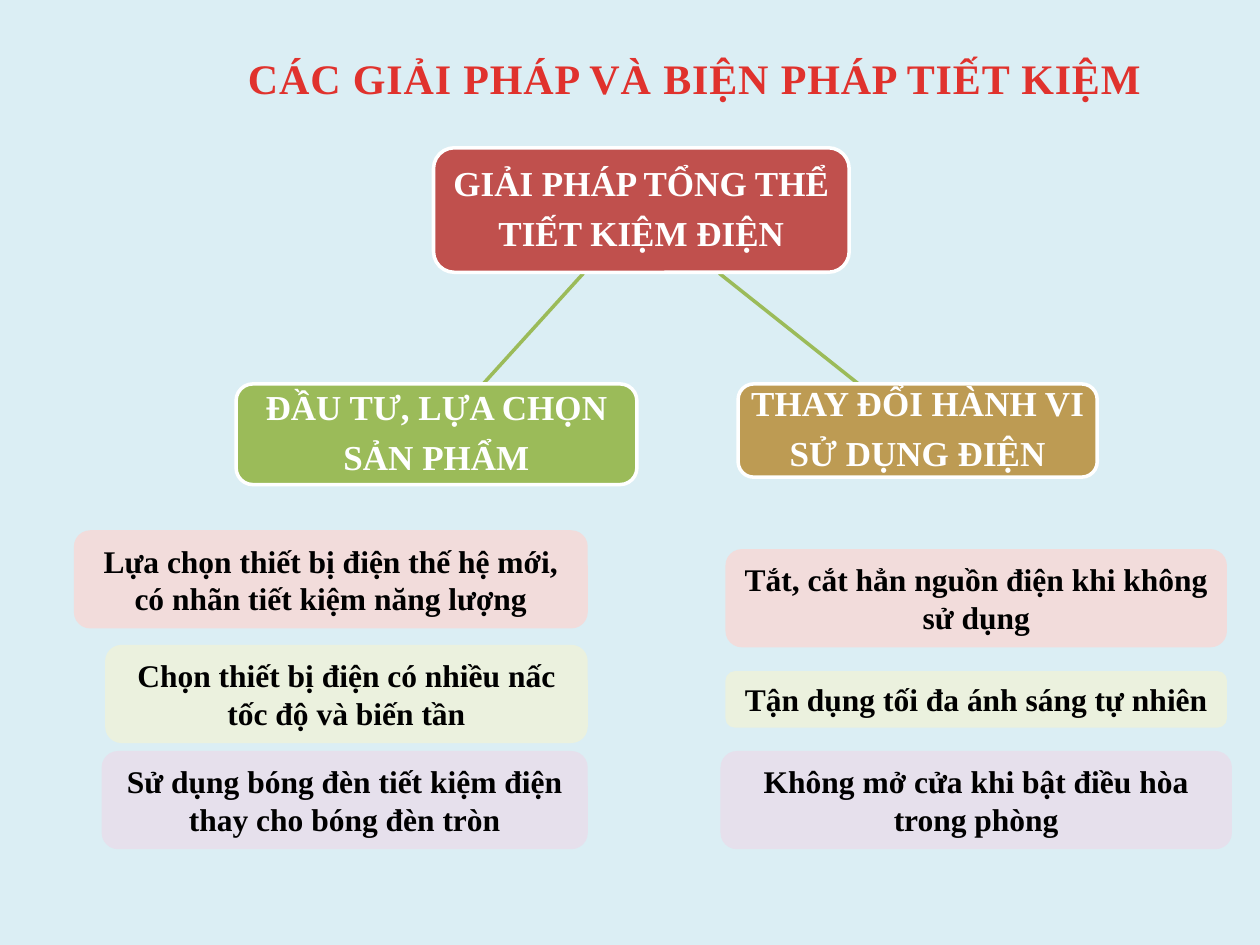
"""Build the slide on overall solutions for saving electricity."""
from lxml import etree
from pptx import Presentation
from pptx import util as u
from pptx.dml.color import RGBColor
from pptx.enum import shapes, text
from pptx.oxml import ns

FONT = "Times New Roman"
TITLE = "CÁC GIẢI PHÁP VÀ BIỆN PHÁP TIẾT KIỆM"
BOXES = [
    (["GIẢI PHÁP TỔNG THỂ", "TIẾT KIỆM ĐIỆN"], "C0504D", (8.74, 2.98, 8.38, 2.51)),
    (["THAY ĐỔI HÀNH VI", "SỬ DỤNG ĐIỆN"], "BD9B53", (14.88, 7.74, 7.24, 1.88)),
    (["ĐẦU TƯ, LỰA CHỌN", "SẢN PHẨM"], "9BBB59", (4.76, 7.74, 8.08, 2.03)),
]
BRANCHES = [(14.5, 17.32), (11.76, 9.73)]
BRANCH_TOP, BRANCH_BOTTOM = 5.51, 7.75
CARD_COLORS = ["F2DCDB", "EBF1DE", "E6E0EC"]
LEFT_CARDS_EDGE, RIGHT_CARDS_CENTER = 11.85, 19.68
LEFT_CARDS = [
    ("Lựa chọn thiết bị điện thế hệ mới, có nhãn tiết kiệm năng lượng", 10.69, 10.36, 1.98),
    ("Chọn thiết bị điện có nhiều nấc tốc độ và biến tần", 13, 9.73, 1.98),
    ("Sử dụng bóng đèn tiết kiệm điện thay cho bóng đèn tròn", 15.14, 9.8, 1.98),
]
RIGHT_CARDS = [
    ("Tắt, cắt hẳn nguồn điện khi không sử dụng", 11.07, 10.11, 1.98),
    ("Tận dụng tối đa ánh sáng tự nhiên", 13.53, 10.11, 1.14),
    ("Không mở cửa khi bật điều hòa trong phòng", 15.14, 10.31, 1.98),
]


def paint(color_format, color):
    color_format.rgb = RGBColor.from_string(color)


def format_paragraph(paragraph, size, color):
    paragraph.alignment = text.PP_ALIGN.CENTER
    paragraph.font.name = FONT
    paragraph.font.size = u.Pt(size)
    paragraph.font.bold = True
    paint(paragraph.font.color, color)


def add_title(slide):
    title = slide.shapes.title
    title.left, title.top, title.width, title.height = map(u.Cm, (4.01, 0.43, 19.99, 1.6))
    title.text_frame.vertical_anchor = text.MSO_ANCHOR.TOP
    title.text_frame.text = TITLE
    paragraph = title.text_frame.paragraphs[0]
    format_paragraph(paragraph, 24, "E0322D")
    paragraph.line_spacing = 1.5
    paragraph.runs[0]._r.get_or_add_rPr().set("spc", "50")


def add_rounded(slide, lines, fill, place, size, color):
    shape = slide.shapes.add_shape(shapes.MSO_SHAPE.ROUNDED_RECTANGLE, *map(u.Cm, place))
    shape.shadow.inherit = False
    shape.fill.solid()
    paint(shape.fill.fore_color, fill)
    shape.line.fill.background()
    frame = shape.text_frame
    frame.word_wrap = True
    frame.vertical_anchor = text.MSO_ANCHOR.MIDDLE
    frame.text = "\n".join(lines)
    for paragraph in frame.paragraphs:
        format_paragraph(paragraph, size, color)
    return shape


def add_box(slide, lines, fill, place):
    shape = add_rounded(slide, lines, fill, place, 20, "FFFFFF")
    shape.line.width = u.Pt(2)
    paint(shape.line.color, "FFFFFF")
    frame = shape.text_frame
    frame.margin_left = frame.margin_right = u.Cm(0.05)
    frame.margin_top = frame.margin_bottom = u.Cm(0.05)
    for paragraph in frame.paragraphs:
        paragraph.line_spacing = 0.9
        paragraph.space_after = u.Pt(7)


def add_branch(slide, start, end):
    points = map(u.Cm, (start, BRANCH_TOP, end, BRANCH_BOTTOM))
    branch = slide.shapes.add_connector(shapes.MSO_CONNECTOR.STRAIGHT, *points)
    branch.line.width = u.Pt(2)
    paint(branch.line.color, "9BBB59")
    etree.SubElement(branch._element.spPr, ns.qn("a:effectLst"))


def main():
    presentation = Presentation()
    presentation.slide_width, presentation.slide_height = u.Cm(25.4), u.Cm(19.05)
    slide = presentation.slides.add_slide(presentation.slide_layouts[5])
    slide.background.fill.solid()
    paint(slide.background.fill.fore_color, "DBEEF4")
    add_title(slide)
    for start, end in BRANCHES:
        add_branch(slide, start, end)
    for lines, fill, place in BOXES:
        add_box(slide, lines, fill, place)
    for cards, anchor, share in ((LEFT_CARDS, LEFT_CARDS_EDGE, 1), (RIGHT_CARDS, RIGHT_CARDS_CENTER, 0.5)):
        for (words, top, width, height), fill in zip(cards, CARD_COLORS):
            place = (anchor - share * width, top, width, height)
            add_rounded(slide, [words], fill, place, 18, "000000")
    presentation.save("out.pptx")


if __name__ == "__main__":
    main()
